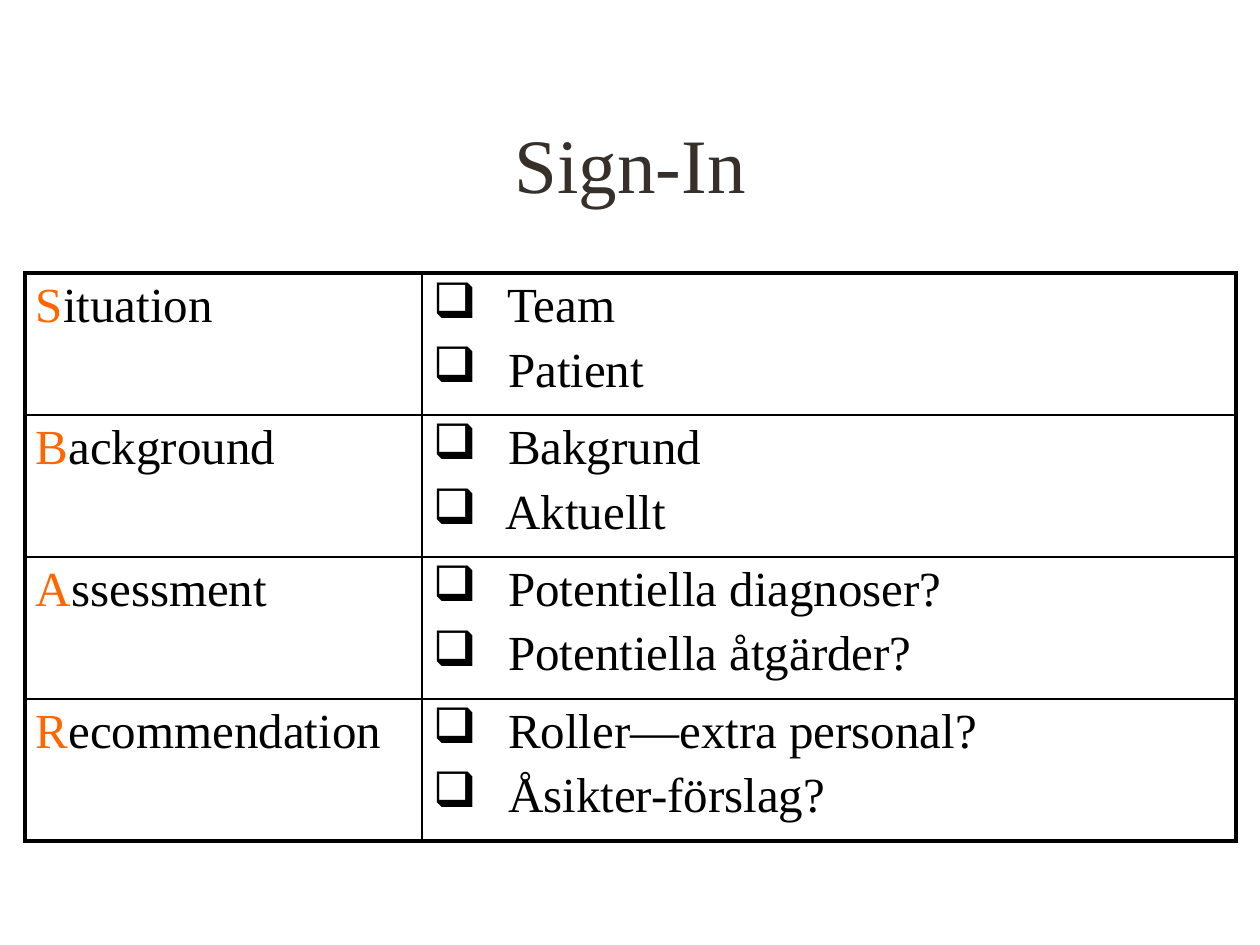
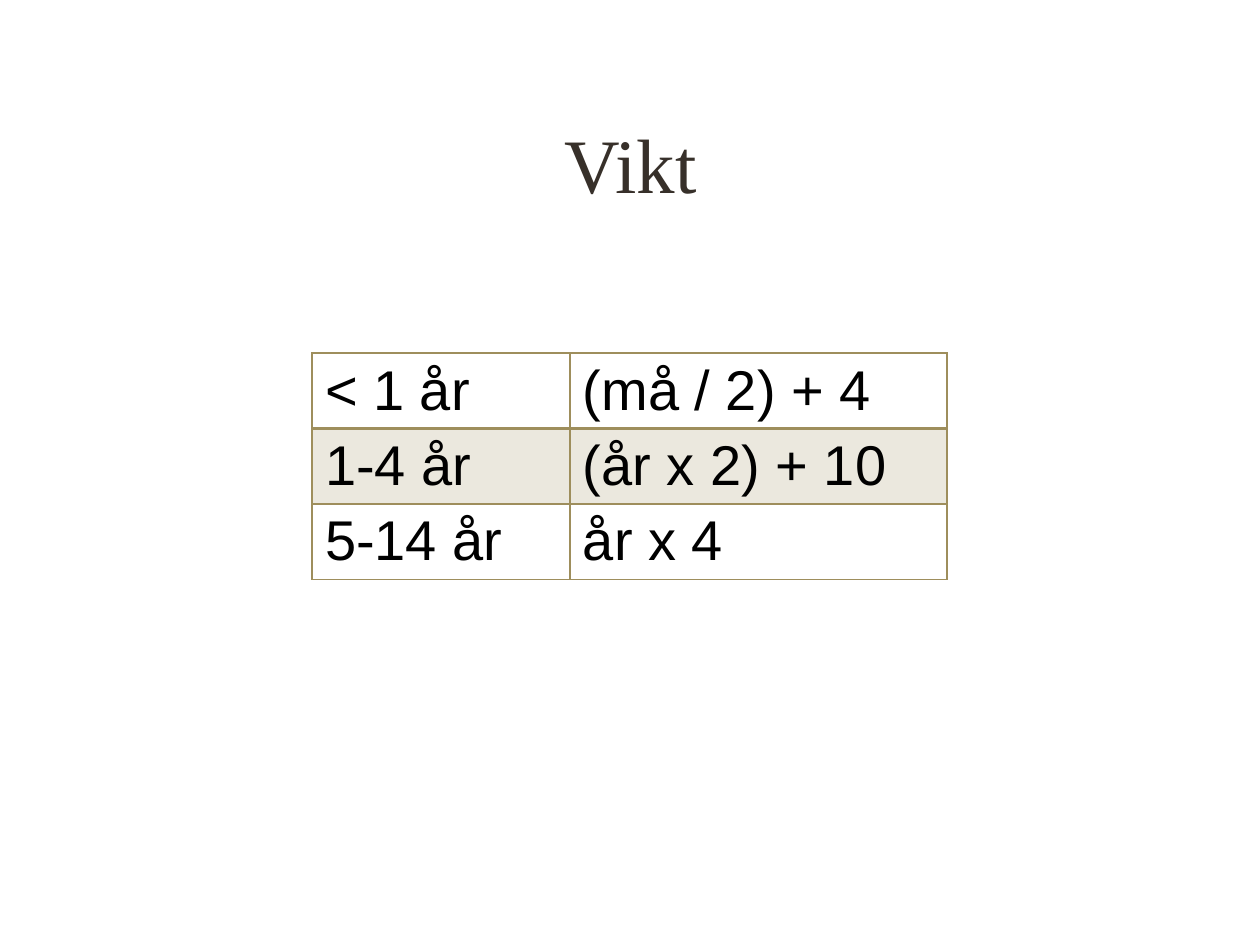
from lxml import etree
from pptx import Presentation
from pptx.dml.color import RGBColor
from pptx.enum.text import MSO_ANCHOR, PP_ALIGN
from pptx.oxml.ns import qn
from pptx.util import Emu, Pt

SBAR = [
    ("Situation", ["Team", "Patient"]),
    ("Background", ["Bakgrund", "Aktuellt"]),
    ("Assessment", ["Potentiella diagnoser?", "Potentiella åtgärder?"]),
    ("Recommendation", ["Roller—extra personal?", "Åsikter-förslag?"]),
]
WEIGHT_RULES = [
    ("< 1 år", "(må / 2) + 4"),
    ("1-4 år", "(år x 2) + 10"),
    ("5-14 år", "år x 4"),
]

BLACK = RGBColor(0x00, 0x00, 0x00)
TITLE_COLOR = RGBColor(0x37, 0x30, 0x2A)
ORANGE = RGBColor(0xFF, 0x66, 0x00)
OLIVE = RGBColor(0x9E, 0x8E, 0x5C)
BAND = RGBColor(0xEB, 0xE8, 0xDE)
SERIF, SANS = "Times New Roman", "Arial"
MIDDLE, CENTER = MSO_ANCHOR.MIDDLE, PP_ALIGN.CENTER
TITLE_ONLY = 5


def px(n):
    return Emu(round(n * 914400 / 126))


def style_run(r, font, size, color):
    r.font.name = font
    r.font.size = Pt(size)
    r.font.color.rgb = color


def add_titled_slide(prs, title):
    slide = prs.slides.add_slide(prs.slide_layouts[TITLE_ONLY])
    sp = slide.shapes.title
    sp.left, sp.top, sp.width, sp.height = px(95), px(84), px(1071), px(158)
    tf = sp.text_frame
    tf.text = title
    tf.vertical_anchor = MIDDLE
    p = tf.paragraphs[0]
    p.alignment = CENTER
    style_run(p.runs[0], SERIF, 44, TITLE_COLOR)
    return slide


def add_plain_table(slide, left, top, col_widths, row_height, rows, margin):
    """Add a table without header or banding styles."""
    table = slide.shapes.add_table(
        rows, len(col_widths), px(left), px(top),
        px(sum(col_widths)), px(row_height * rows)).table
    table.first_row = table.horz_banding = False
    for col, width in zip(table.columns, col_widths):
        col.width = px(width)
    for row in table.rows:
        row.height = px(row_height)
    for cell in table.iter_cells():
        cell.margin_left = cell.margin_right = px(margin)
    return table


def set_borders(cell, color, left, right, top, bottom):
    """Draw the four cell edges; widths are in points."""
    tc_pr = cell._tc.get_or_add_tcPr()
    for side, width in zip("LRTB", (left, right, top, bottom)):
        ln = etree.SubElement(tc_pr, qn(f"a:ln{side}"), w=str(Pt(width)))
        fill = etree.SubElement(ln, qn("a:solidFill"))
        etree.SubElement(fill, qn("a:srgbClr"), val=str(color))


def set_checkbox(p):
    p_pr = p._p.get_or_add_pPr()
    p_pr.set("marL", str(px(63)))
    p_pr.set("indent", str(-px(63)))
    etree.SubElement(p_pr, qn("a:buChar"), char="❑")


def build_sign_in(prs):
    slide = add_titled_slide(prs, "Sign-In")
    table = add_plain_table(slide, 25, 273, (397, 814), 142, len(SBAR), 11)
    thin, thick = 1, 2.25
    last = len(SBAR) - 1
    for i, (word, checks) in enumerate(SBAR):
        word_cell, check_cell = table.cell(i, 0), table.cell(i, 1)
        p = word_cell.text_frame.paragraphs[0]
        for part, color in ((word[0], ORANGE), (word[1:], BLACK)):
            r = p.add_run()
            r.text = part
            style_run(r, SERIF, 28, color)

        tf = check_cell.text_frame
        tf.text = "\n".join(" " + check for check in checks)
        for j, p in enumerate(tf.paragraphs):
            if j:
                p.space_before = Pt(5.6)
            set_checkbox(p)
            style_run(p.runs[0], SERIF, 28, BLACK)

        top = thick if i == 0 else thin
        bottom = thick if i == last else thin
        set_borders(word_cell, BLACK, thick, thin, top, bottom)
        set_borders(check_cell, BLACK, thin, thick, top, bottom)
        for cell in (word_cell, check_cell):
            cell.fill.background()


def build_weight(prs):
    slide = add_titled_slide(prs, "Vikt")
    table = add_plain_table(slide, 312, 353, (258, 377), 75,
                            len(WEIGHT_RULES), 13)
    for i, texts in enumerate(WEIGHT_RULES):
        for j, text in enumerate(texts):
            cell = table.cell(i, j)
            cell.text_frame.text = text
            style_run(cell.text_frame.paragraphs[0].runs[0], SANS, 32, BLACK)
            set_borders(cell, OLIVE, 1, 1, 2 if i == 1 else 1,
                        2 if i == 0 else 1)
            if i == 1:
                cell.fill.solid()
                cell.fill.fore_color.rgb = BAND
            else:
                cell.fill.background()


def main():
    prs = Presentation()
    prs.slide_width, prs.slide_height = px(1260), px(945)
    build_sign_in(prs)
    build_weight(prs)
    prs.save("out.pptx")


if __name__ == "__main__":
    main()
